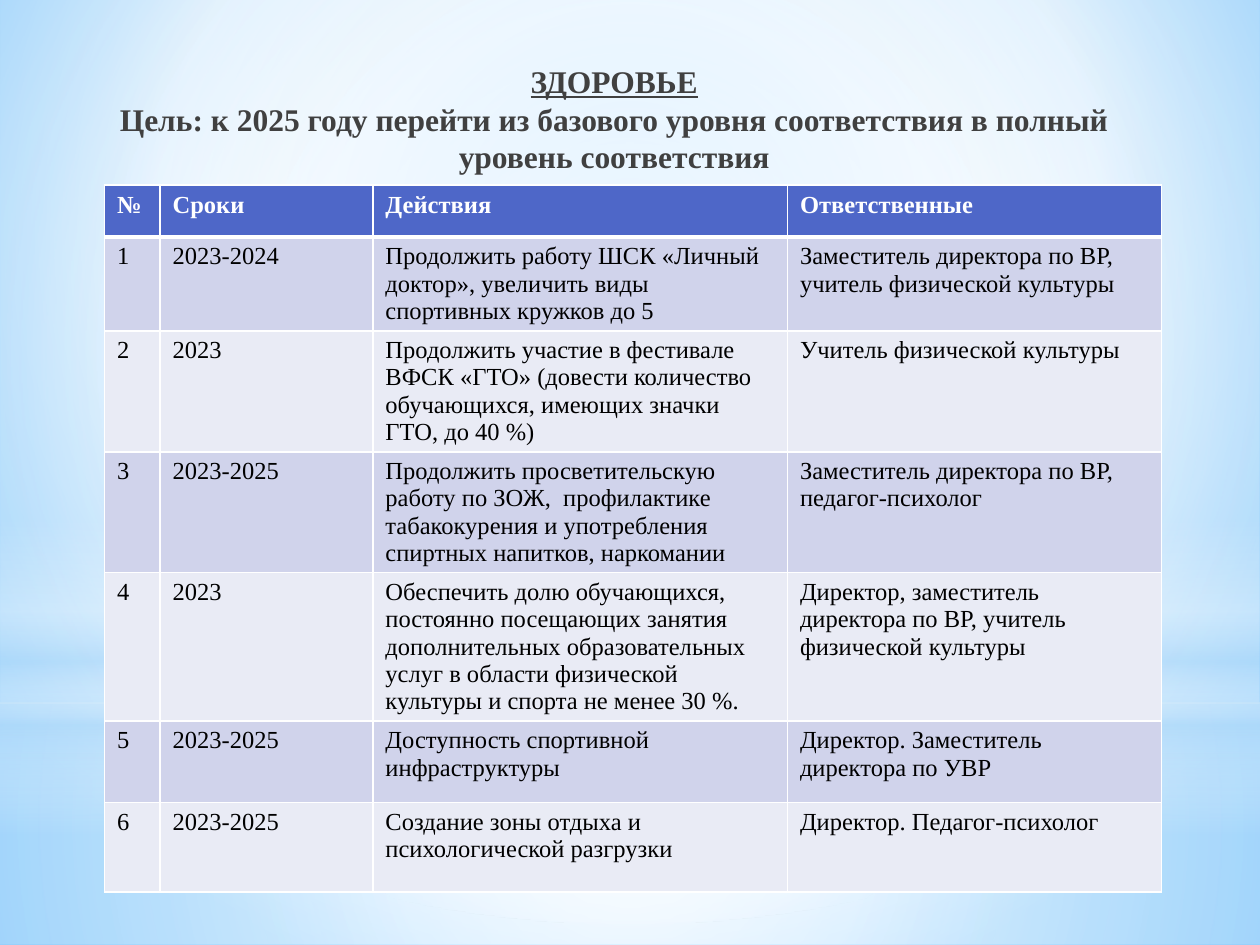
import pptx
import pptx.util
import pptx.dml.color
import pptx.enum.shapes
import pptx.enum.text
import pptx.oxml
import pptx.oxml.ns

WIDE, HIGH = 10, 7.5
FONT = "Times New Roman"
HUES = {
    "head": "4E67C8", "odd": "D0D3EB", "even": "E9EBF5", "white": "FFFFFF",
    "text": "000000", "title": "404040", "sky": "9ED5FF", "blue": "5BB9FF",
    "pale": "B4DCFA",
}
MID = (50, 50, 50, 50)
COLS = (0.44, 1.69, 3.29, 2.97)
ROWS = (0.41, 0.41, 0.41, 0.41, 0.59, 0.65, 0.71)
GOAL = "Цель: к 2025 году перейти из базового уровня соответствия в полный уровень соответствия"
PLAN = (
    ("№", "Сроки", "Действия", "Ответственные"),
    ("1", "2023-2024",
     "Продолжить работу ШСК «Личный доктор», увеличить виды спортивных кружков до 5",
     "Заместитель директора по ВР, учитель физической культуры"),
    ("2", "2023",
     "Продолжить участие в фестивале ВФСК «ГТО» (довести количество обучающихся, имеющих значки ГТО, до 40 %)",
     "Учитель физической культуры"),
    ("3", "2023-2025",
     "Продолжить просветительскую работу по ЗОЖ,  профилактике табакокурения и употребления спиртных напитков, наркомании",
     "Заместитель директора по ВР, педагог-психолог"),
    ("4", "2023",
     "Обеспечить долю обучающихся, постоянно посещающих занятия дополнительных образовательных услуг в области физической культуры и спорта не менее 30 %.",
     "Директор, заместитель директора по ВР, учитель физической культуры"),
    ("5", "2023-2025", "Доступность спортивной инфраструктуры",
     "Директор. Заместитель директора по УВР"),
    ("6", "2023-2025", "Создание зоны отдыха и психологической разгрузки",
     "Директор. Педагог-психолог"),
)


def rgb(hue):
    """Return the named colour."""
    return pptx.dml.color.RGBColor.from_string(HUES[hue])


def inch(box):
    """Turn a box in inches into lengths."""
    return [pptx.util.Inches(side) for side in box]


def blend(owner, stops, focus=None):
    """Swap the solid fill for a radial or downward gradient."""
    marks = "".join(
        f'<a:gs pos="{pos * 1000}"><a:srgbClr val="{HUES[hue]}">'
        f'<a:alpha val="{alpha * 1000}"/></a:srgbClr></a:gs>'
        for pos, hue, alpha in stops)
    if focus:
        sides = " ".join(f'{side}="{part * 1000}"' for side, part in zip("ltrb", focus))
        way = f'<a:path path="circle"><a:fillToRect {sides}/></a:path>'
    else:
        way = '<a:lin ang="5400000" scaled="0"/>'
    fill = pptx.oxml.parse_xml(
        f'<a:gradFill {pptx.oxml.ns.nsdecls("a")} rotWithShape="1">'
        f'<a:gsLst>{marks}</a:gsLst>{way}</a:gradFill>')
    solid = next(owner.iter(pptx.oxml.ns.qn("a:solidFill")))
    solid.getparent().replace(solid, fill)


def veil(slide, kind, box, stops, focus=None):
    """Lay one translucent shape over the backdrop."""
    shape = slide.shapes.add_shape(kind, *inch(box))
    shape.shadow.inherit = False
    shape.line.fill.background()
    shape.fill.solid()
    blend(shape._element.spPr, stops, focus)


def sky(slide, box):
    """Paint the backdrop with its layers of light."""
    left, top, wide, high = box
    kinds = pptx.enum.shapes.MSO_SHAPE
    slide.background.fill.solid()
    blend(slide._element, [(0, "sky", 100), (60, "white", 100), (100, "blue", 100)],
          (20, 10, 20, 60))
    split = 0.744 * high
    veil(slide, kinds.RECTANGLE, (left, top + split, wide, high - split),
         [(0, "white", 91), (37, "white", 76), (100, "pale", 79)], MID)
    veil(slide, kinds.RECTANGLE, (left, top, wide, split),
         [(0, "white", 89), (48, "white", 62), (100, "pale", 79)], MID)
    veil(slide, kinds.RECTANGLE, (left, top + 0.55 * high, wide, high / 3),
         [(0, "white", 0), (29, "white", 30), (45, "pale", 40),
          (55, "white", 26), (65, "pale", 60), (100, "white", 0)])
    veil(slide, kinds.OVAL, (left, top + 0.233 * high, wide, split),
         [(0, "white", 100), (56, "white", 0)], MID)


def write(para, text, size, hue, bold=False, under=False):
    """Add one formatted run."""
    run = para.add_run()
    run.text = text
    font = run.font
    font.name, font.size = FONT, pptx.util.Pt(size)
    font.bold, font.underline = bold, under
    font.color.rgb = rgb(hue)


def title(slide, box):
    """Place the heading and goal in the title placeholder."""
    shape = slide.shapes.title
    shape._element.getparent().append(shape._element)
    shape.left, shape.top, shape.width, shape.height = inch(box)
    frame = shape.text_frame
    frame.word_wrap = True
    frame.auto_size = pptx.enum.text.MSO_AUTO_SIZE.NONE
    frame.vertical_anchor = pptx.enum.text.MSO_ANCHOR.TOP
    para = frame.paragraphs[0]
    para.alignment = pptx.enum.text.PP_ALIGN.CENTER
    write(para, "ЗДОРОВЬЕ", 18, "title", True, True)
    para.add_line_break()
    write(para, GOAL, 18, "title", True)


def edge(cell, side, width):
    """Draw one white cell border."""
    line = pptx.oxml.parse_xml(
        f'<a:ln{side} {pptx.oxml.ns.nsdecls("a")} w="{pptx.util.Pt(width)}">'
        f'<a:solidFill><a:srgbClr val="{HUES["white"]}"/></a:solidFill></a:ln{side}>')
    cell._tc.get_or_add_tcPr().append(line)


def plan(slide, box):
    """Build the table of actions."""
    frame = slide.shapes.add_table(len(ROWS), len(COLS), *inch(box))
    table = frame.table
    for col, wide in zip(table.columns, COLS):
        col.width = pptx.util.Inches(wide)
    for row, high in zip(table.rows, ROWS):
        row.height = pptx.util.Inches(high)
    frame.height = pptx.util.Inches(box[3])
    for i, texts in enumerate(PLAN):
        head = i == 0
        hue = "head" if head else ("even", "odd")[i % 2]
        for j, text in enumerate(texts):
            cell = table.cell(i, j)
            for side in "LRTB":
                thick = (head and side == "B") or (i == 1 and side == "T")
                edge(cell, side, 3 if thick else 1)
            cell.fill.solid()
            cell.fill.fore_color.rgb = rgb(hue)
            write(cell.text_frame.paragraphs[0], text, 14,
                  "white" if head else "text", head)


def main():
    """Build and save the slide."""
    deck = pptx.Presentation()
    deck.slide_width, deck.slide_height = inch((WIDE, HIGH))
    slide = deck.slides.add_slide(deck.slide_layouts[5])
    sky(slide, (0, 0, WIDE, HIGH))
    title(slide, (0.67, 0.44, 8.41, 5.59))
    plan(slide, (0.83, 1.47, sum(COLS), 5.9))
    deck.save("out.pptx")


if __name__ == "__main__":
    main()
